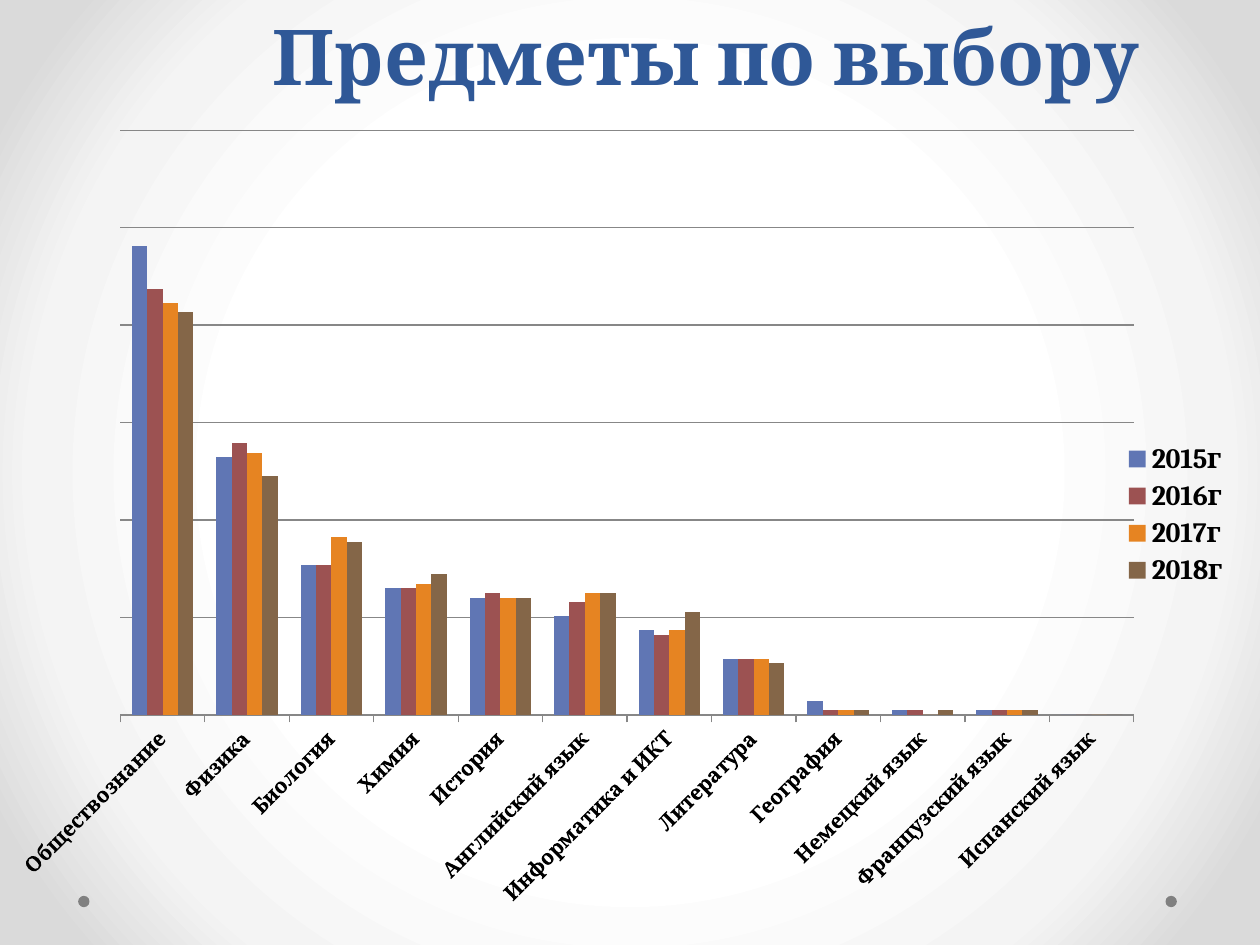
from dataclasses import dataclass

from lxml.etree import SubElement
from pptx import Presentation
from pptx.chart.data import CategoryChartData
from pptx.dml.color import RGBColor
from pptx.enum.chart import XL_CHART_TYPE, XL_LEGEND_POSITION, XL_TICK_LABEL_POSITION, XL_TICK_MARK
from pptx.enum.shapes import MSO_SHAPE
from pptx.enum.text import MSO_ANCHOR, MSO_AUTO_SIZE, PP_ALIGN
from pptx.oxml import parse_xml
from pptx.oxml.ns import nsdecls, qn
from pptx.util import Inches, Pt


@dataclass(frozen=True)
class Theme:
    font: str = "Cambria"
    title: str = "2F5897"
    text: str = "000000"
    line: str = "878787"
    dot: str = "808080"
    title_size: int = 44
    chart_size: int = 10
    label_size: int = 12
    legend_size: int = 16
    backdrop: tuple = ((50, "FFFFFF"), (76, "F4F4F4"), (92, "DADADA"))


THEME = Theme()

SUBJECTS = [
    "Обществознание", "Физика", "Биология", "Химия", "История", "Английский язык",
    "Информатика и ИКТ", "Литература", "География", "Немецкий язык",
    "Французский язык", "Испанский язык",
]
# Year, bar colour, one value per subject
YEARS = [
    ("2015г", "6076B4", (100, 55, 32, 27, 25, 21, 18, 12, 3, 1, 1, 0)),
    ("2016г", "9C5252", (91, 58, 32, 27, 26, 24, 17, 12, 1, 1, 1, 0)),
    ("2017г", "E68422", (88, 56, 38, 28, 25, 26, 18, 12, 1, 0, 1, 0)),
    ("2018г", "846648", (86, 51, 37, 30, 25, 26, 22, 11, 1, 1, 1, 0)),
]
GRID_STEP = 20.8
GRID_COUNT = 6
PLOT_AREA = {"x": 0.079, "y": 0.024, "w": 0.832, "h": 0.724}


def paint_background(page):
    """Fill the page with a gradient that darkens from the centre outwards."""
    page.background.fill.solid()
    solid = page.element.find(".//" + qn("p:bgPr")).find(qn("a:solidFill"))
    stops = "".join(
        f'<a:gs pos="{position * 1000}"><a:srgbClr val="{color}"/></a:gs>'
        for position, color in THEME.backdrop
    )
    gradient = parse_xml(
        f'<a:gradFill {nsdecls("a")} rotWithShape="1"><a:gsLst>{stops}</a:gsLst>'
        '<a:path path="circle"><a:fillToRect l="50000" t="50000" r="50000" b="50000"/>'
        "</a:path></a:gradFill>"
    )
    solid.getparent().replace(solid, gradient)


def add_dot(page, left, top, size=0.09):
    dot = page.shapes.add_shape(
        MSO_SHAPE.OVAL, Inches(left), Inches(top), Inches(size), Inches(size))
    dot.shadow.inherit = False
    dot.fill.solid()
    dot.fill.fore_color.rgb = RGBColor.from_string(THEME.dot)
    dot.line.fill.background()


def style_font(font, size, color=THEME.text, bold=False):
    font.name = THEME.font
    font.size = Pt(size)
    font.bold = bold
    font.color.rgb = RGBColor.from_string(color)


def style_line(line):
    line.color.rgb = RGBColor.from_string(THEME.line)
    line.width = Pt(0.75)


def set_title(page, text):
    title = page.shapes.title
    title.left, title.top = Inches(1.36), Inches(0.11)
    title.width, title.height = Inches(8.49), Inches(0.65)
    frame = title.text_frame
    frame.text = text
    frame.word_wrap = True
    frame.auto_size = MSO_AUTO_SIZE.NONE
    frame.vertical_anchor = MSO_ANCHOR.MIDDLE
    para = frame.paragraphs[0]
    para.alignment = PP_ALIGN.CENTER
    style_font(para.runs[0].font, THEME.title_size, THEME.title, bold=True)


def fix_plot_area(chart):
    """Pin the inner plot area to fractions of the chart frame."""
    plot_area = chart.element.find(".//" + qn("c:plotArea"))
    layout = plot_area.find(qn("c:layout"))
    if layout is None:
        layout = parse_xml(f'<c:layout {nsdecls("c")}/>')
        plot_area.insert(0, layout)
    manual = SubElement(layout, qn("c:manualLayout"))
    settings = {"layoutTarget": "inner", "xMode": "edge", "yMode": "edge", **PLOT_AREA}
    for name, value in settings.items():
        SubElement(manual, qn("c:" + name)).set("val", str(value))


def style_axes(chart):
    subjects = chart.category_axis
    subjects.major_tick_mark = XL_TICK_MARK.OUTSIDE
    subjects.tick_label_position = XL_TICK_LABEL_POSITION.LOW
    style_font(subjects.tick_labels.font, THEME.label_size, bold=True)
    style_line(subjects.format.line)
    labels = subjects._element.find(qn("c:txPr")).find(qn("a:bodyPr"))
    labels.set("rot", str(-45 * 60000))
    labels.set("vert", "horz")

    values = chart.value_axis
    values.visible = False
    values.minimum_scale = 0
    values.maximum_scale = round(GRID_STEP * GRID_COUNT, 1)
    values.major_unit = GRID_STEP
    values.has_major_gridlines = True
    style_line(values.major_gridlines.format.line)


def add_subject_chart(page):
    data = CategoryChartData()
    data.categories = SUBJECTS
    for year, _, shares in YEARS:
        data.add_series(year, shares)
    chart = page.shapes.add_chart(
        XL_CHART_TYPE.COLUMN_CLUSTERED,
        Inches(0.16), Inches(0.88), Inches(9.7), Inches(6.41), data).chart
    chart.has_title = False
    style_font(chart.font, THEME.chart_size)

    # Bars
    plot = chart.plots[0]
    plot.gap_width = 150
    plot.overlap = 0
    plot.vary_by_categories = False
    for series, (_, color, _) in zip(plot.series, YEARS):
        series.format.fill.solid()
        series.format.fill.fore_color.rgb = RGBColor.from_string(color)

    # Axes, legend and plot position
    style_axes(chart)
    chart.has_legend = True
    chart.legend.position = XL_LEGEND_POSITION.RIGHT
    chart.legend.include_in_layout = False
    style_font(chart.legend.font, THEME.legend_size, bold=True)
    fix_plot_area(chart)


def main():
    deck = Presentation()
    deck.slide_width, deck.slide_height = Inches(10), Inches(7.5)
    page = deck.slides.add_slide(deck.slide_layouts[5])

    # Backdrop
    paint_background(page)
    for left in (0.62, 9.25):
        add_dot(page, left, 7.11)

    # Content
    set_title(page, "Предметы по выбору")
    add_subject_chart(page)

    deck.save("out.pptx")


if __name__ == "__main__":
    main()
